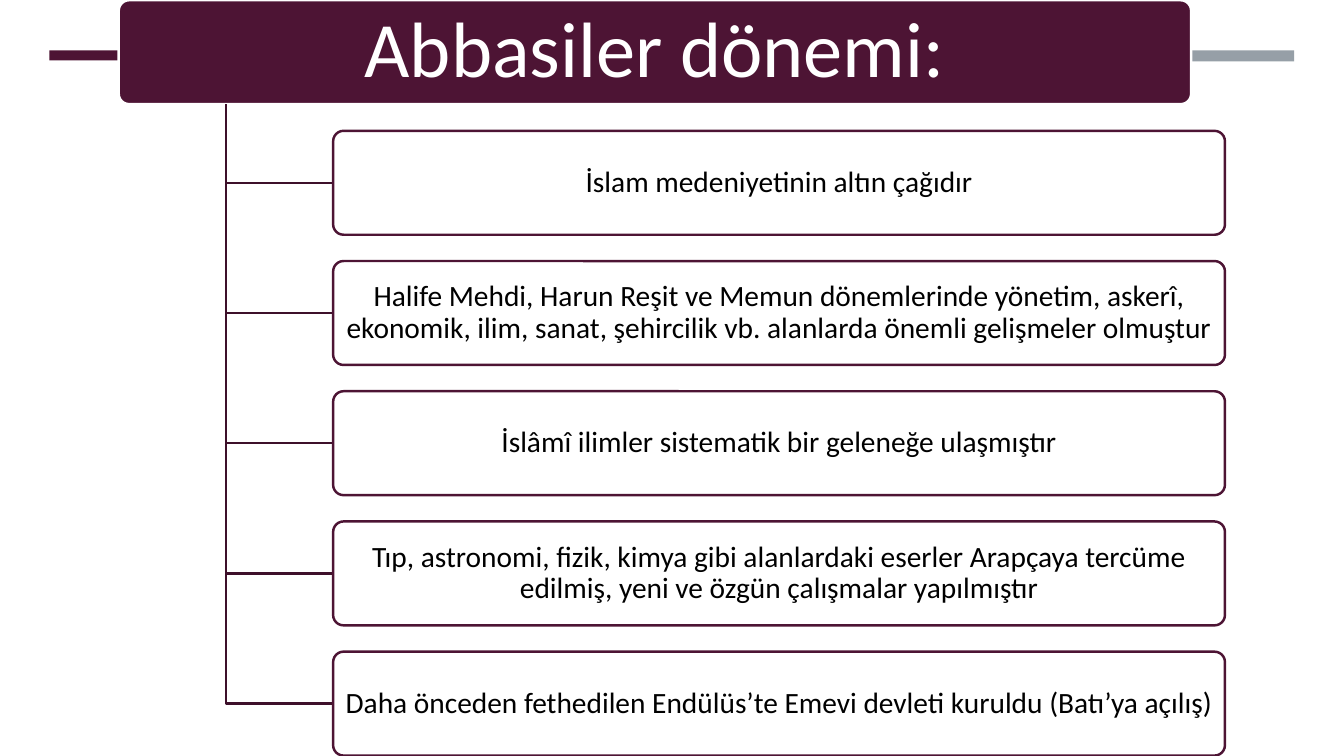
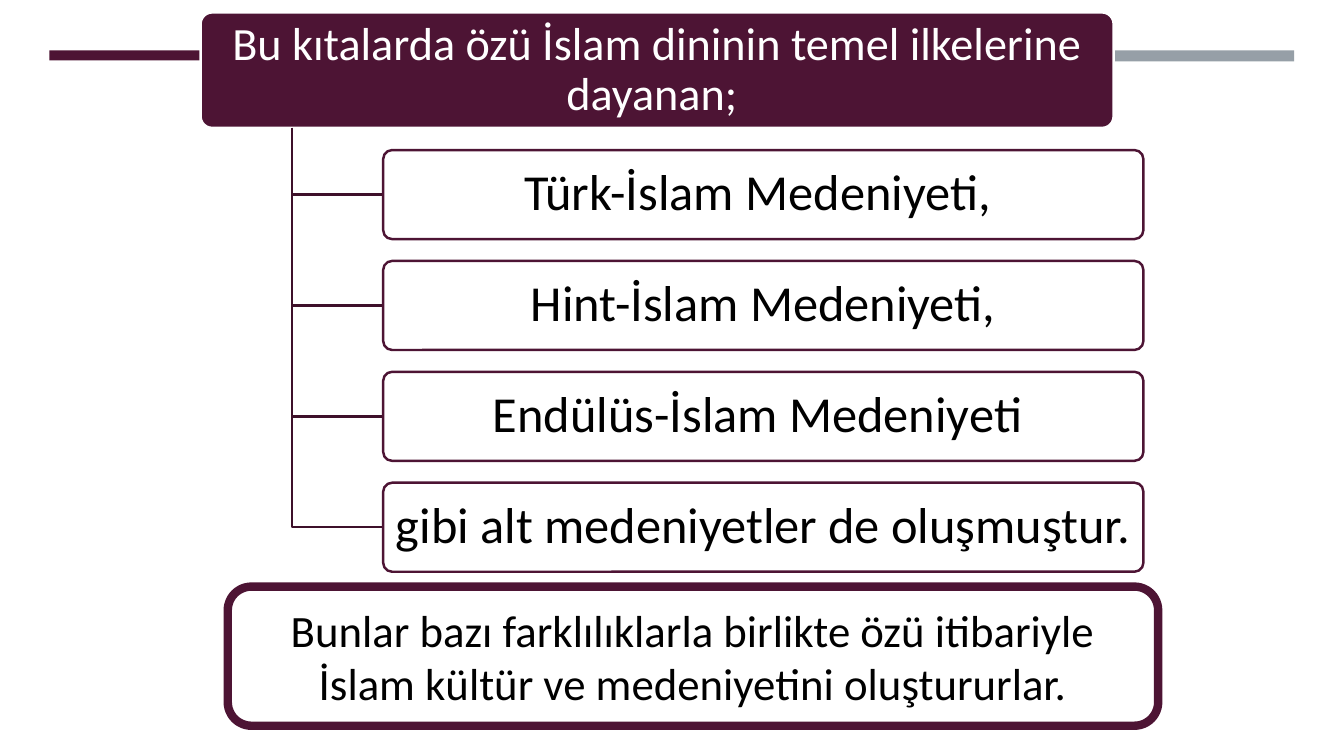
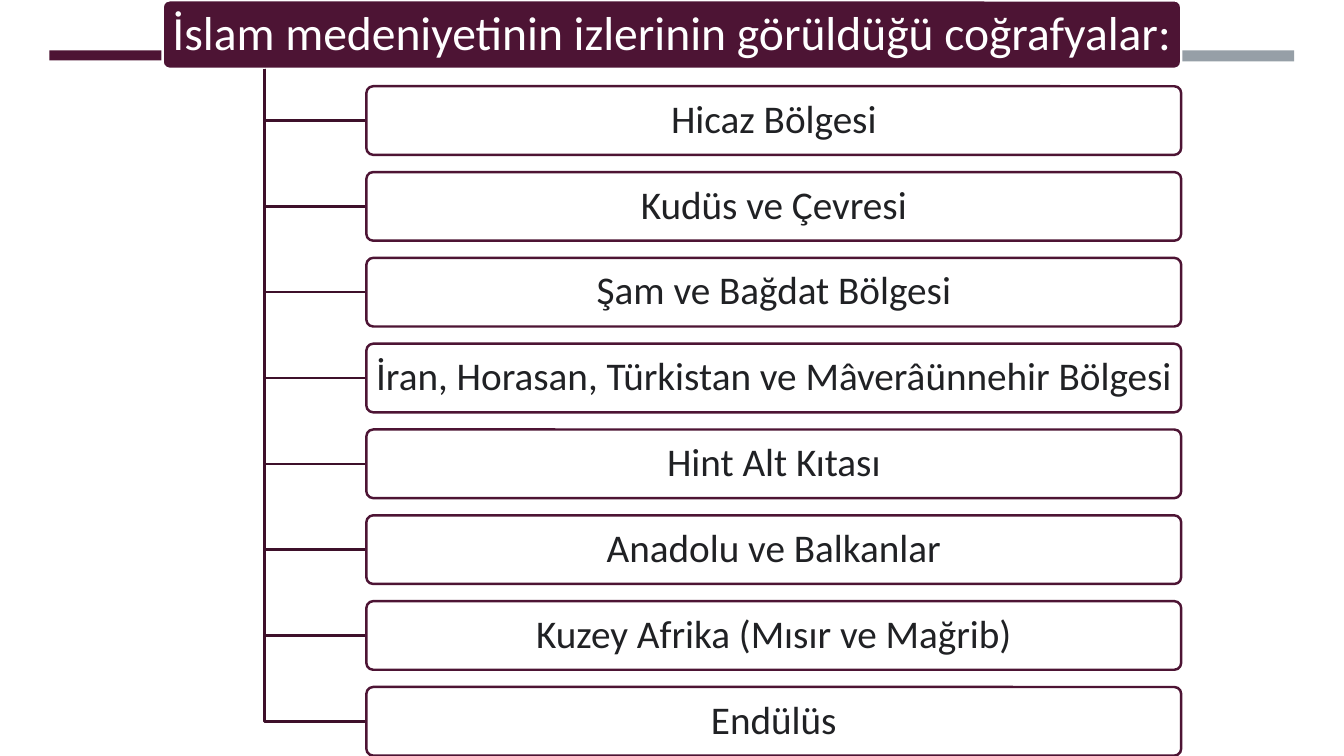
"""Build three slides on Islamic civilisation, each a heading with a branching list."""
from pptx import Presentation
from pptx.dml.color import RGBColor
from pptx.enum.shapes import MSO_SHAPE
from pptx.enum.text import MSO_ANCHOR, PP_ALIGN
from pptx.util import Pt

RECT, ROUND = MSO_SHAPE.RECTANGLE, MSO_SHAPE.ROUNDED_RECTANGLE
MIDDLE, CENTER = MSO_ANCHOR.MIDDLE, PP_ALIGN.CENTER
FONT = "Calibri"
PLUM, DARK, GREY = "4D1434", "3E102A", "969FA7"
WHITE, BLACK, INK = "FFFFFF", "000000", "202124"
BANDS = [(35.3, 7.2, PLUM), (632.9, 7.9, GREY)]

TREES = [
    dict(head="Abbasiler dönemi:", frame=(84.8, 0.2, 766, 74.2), big=56,
         top=93.5, width=637, high=74.2, step=93, size=21, ink=BLACK,
         items=["İslam medeniyetinin altın çağıdır",
                "Halife Mehdi, Harun Reşit ve Memun dönemlerinde yönetim, askerî, "
                "ekonomik, ilim, sanat, şehircilik vb. alanlarda önemli gelişmeler olmuştur",
                "İslâmî ilimler sistematik bir geleneğe ulaşmıştır",
                "Tıp, astronomi, fizik, kimya gibi alanlardaki eserler Arapçaya tercüme "
                "edilmiş, yeni ve özgün çalışmalar yapılmıştır",
                "Daha önceden fethedilen Endülüs’te Emevi devleti kuruldu (Batı’ya açılış)"]),
    dict(head="Bu kıtalarda özü İslam dininin temel ilkelerine dayanan; ",
         frame=(143.3, 8.9, 652.2, 82.5), big=33,
         top=107.2, width=543, high=63.6, step=79.2, size=36, ink=BLACK,
         items=["Türk-İslam Medeniyeti, ", "Hint-İslam Medeniyeti,",
                "Endülüs-İslam Medeniyeti ", "gibi alt medeniyetler de oluşmuştur. "]),
    dict(head="İslam medeniyetinin izlerinin görüldüğü coğrafyalar:",
         frame=(116.2, 0.2, 727.6, 49), big=34,
         top=61.6, width=582, high=49, step=61.3, size=28, ink=INK,
         items=["Hicaz Bölgesi", "Kudüs ve Çevresi", "Şam ve Bağdat Bölgesi",
                "İran, Horasan, Türkistan ve Mâverâünnehir Bölgesi", "Hint Alt Kıtası",
                "Anadolu ve Balkanlar", "Kuzey Afrika (Mısır ve Mağrib)", "Endülüs"]),
]


def rgb(code):
    """Turn a hex string into a colour."""
    return RGBColor.from_string(code)


def card(slide, frame, text, size, ink, fill, edge, weight=1.75, curve=0.1, pad=(7.2, 3.6), lead=0.9):
    """Draw a rounded box with centred text."""
    box = slide.shapes.add_shape(ROUND, *map(Pt, frame))
    box.shadow.inherit = False
    box.adjustments[0] = curve
    box.fill.solid()
    box.fill.fore_color.rgb = rgb(fill)
    box.line.color.rgb = rgb(edge)
    box.line.width = Pt(weight)
    body = box.text_frame
    body.word_wrap = True
    body.vertical_anchor = MIDDLE
    body.margin_left = body.margin_right = Pt(pad[0])
    body.margin_top = body.margin_bottom = Pt(pad[1])
    body.text = text
    para = body.paragraphs[0]
    para.alignment = CENTER
    para.line_spacing = lead
    para.font.name = FONT
    para.font.size = Pt(size)
    para.font.color.rgb = rgb(ink)


deck = Presentation()
deck.slide_width, deck.slide_height = Pt(960), Pt(540)

for tree in TREES:
    slide = deck.slides.add_slide(deck.slide_layouts[6])
    for left, high, tone in BANDS:
        band = slide.shapes.add_shape(RECT, Pt(left), Pt(36), Pt(291.6), Pt(high))
        band.shadow.inherit = False
        band.fill.solid()
        band.fill.fore_color.rgb = rgb(tone)
        band.line.fill.background()

    left, top, width, high = tree["frame"]
    big, size = tree["big"], tree["size"]
    card(slide, tree["frame"], tree["head"], big, WHITE, PLUM, WHITE, pad=(big * 0.15, big * 0.1))

    trunk, start, base = left + width * 0.1, left + width * 0.2, top + high
    for row, text in enumerate(tree["items"]):
        y = tree["top"] + row * tree["step"]
        mid = y + tree["high"] / 2
        path = slide.shapes.build_freeform(Pt(trunk), Pt(base))
        path.add_line_segments([(Pt(trunk), Pt(mid)), (Pt(start), Pt(mid))], close=False)
        branch = path.convert_to_shape()
        branch.shadow.inherit = False
        branch.fill.background()
        branch.line.color.rgb = rgb(DARK)
        branch.line.width = Pt(1.75)
        card(slide, (start, y, tree["width"], tree["high"]), text, size, tree["ink"],
             WHITE, PLUM, pad=(size * 0.15, size * 0.1))

card(deck.slides[1], (162.7, 419, 664.6, 99.4),
     "Bunlar bazı farklılıklarla birlikte özü itibariyle İslam kültür ve medeniyetini oluştururlar.",
     32, BLACK, WHITE, PLUM, weight=6, curve=0.17, lead=1.0)

deck.save("out.pptx")
